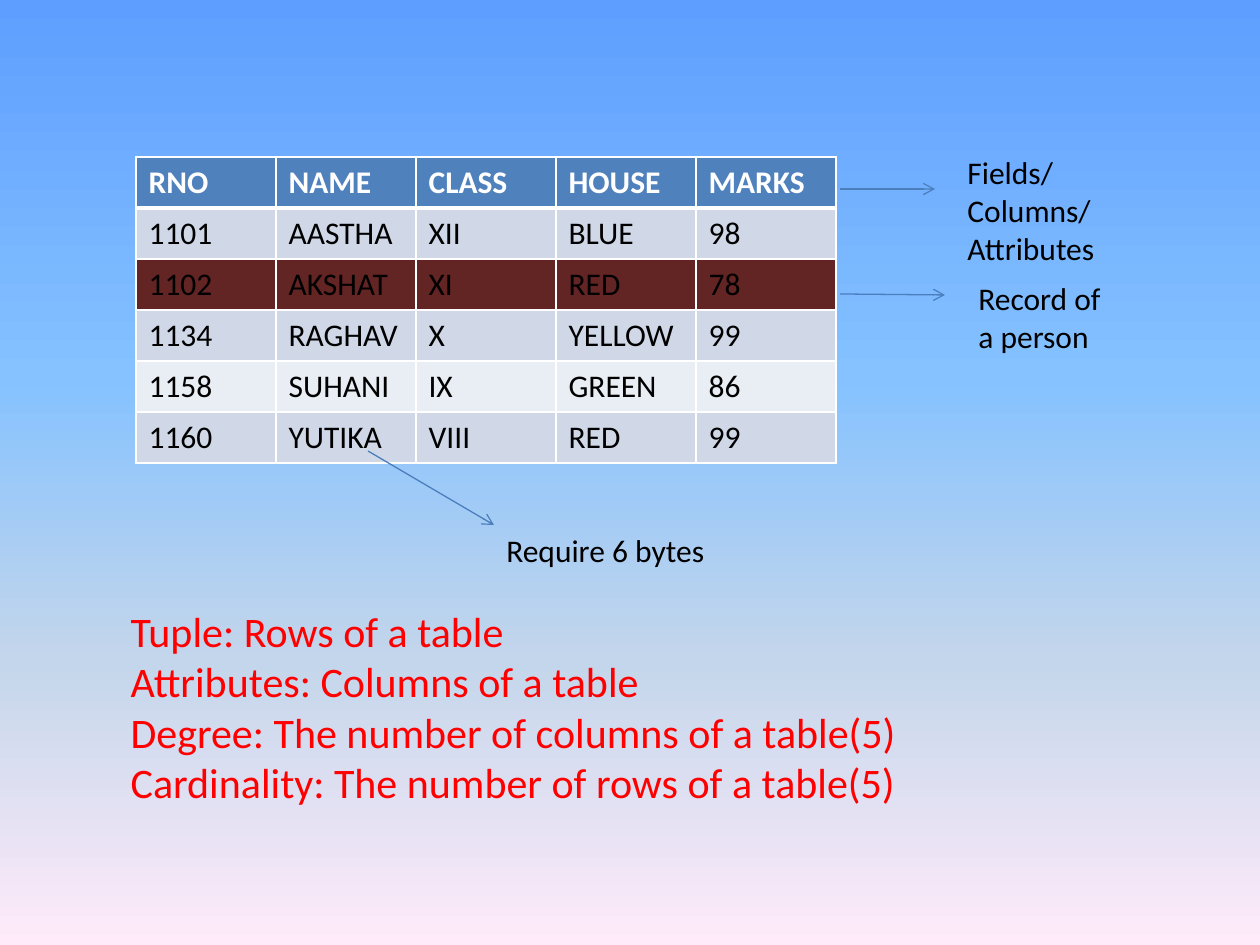
from typing import NamedTuple

from lxml import etree
from pptx import Presentation
from pptx import util as u
from pptx.dml.color import RGBColor
from pptx.enum import shapes, text
from pptx.oxml.ns import qn

PX = u.Inches(1) / 126
FONT = "Calibri"
COLORS = {
    "header": "4F81BD",
    "band": "D0D8E8",
    "plain": "E9EDF4",
    "record": "632523",
    "white": "FFFFFF",
    "black": "000000",
    "definition": "FF0000",
    "arrow": "4B7EBC",
}
BACKGROUND_STOPS = [(0, "5E9EFF"), (40, "85C2FF"), (70, "C4D6EB"), (100, "FFEBFA")]


class Box(NamedTuple):
    left: int
    top: int
    width: int
    height: int


class Row(NamedTuple):
    fill: str
    values: tuple[str, ...]


class Callout(NamedTuple):
    label: str
    box: Box
    start: tuple[int, int]
    end: tuple[int, int]


TABLE_BOX = Box(136, 157, 700, 306)
ROWS = [
    Row("header", ("RNO", "NAME", "CLASS", "HOUSE", "MARKS")),
    Row("band", ("1101", "AASTHA", "XII", "BLUE", "98")),
    Row("record", ("1102", "AKSHAT", "XI", "RED", "78")),
    Row("band", ("1134", "RAGHAV", "X", "YELLOW", "99")),
    Row("plain", ("1158", "SUHANI", "IX", "GREEN", "86")),
    Row("band", ("1160", "YUTIKA", "VIII", "RED", "99")),
]
CALLOUTS = [
    Callout("Require 6 bytes", Box(494, 525, 252, 50), (368, 451), (494, 525)),
    Callout("Record of a person", Box(966, 273, 168, 89), (840, 294), (945, 295)),
    Callout("Fields/Columns/Attributes", Box(955, 147, 231, 89), (840, 189), (935, 189)),
]
DEFINITIONS_BOX = Box(118, 599, 1061, 217)
DEFINITIONS = [
    "Tuple: Rows of a table",
    "Attributes: Columns of a table",
    "Degree: The number of columns of a table(5)",
    "Cardinality: The number of rows of a table(5)",
]


def px(length: float) -> u.Emu:
    return u.Emu(round(length * PX))


def rgb(name: str) -> RGBColor:
    return RGBColor.from_string(COLORS[name])


def write(paragraph, content: str, *, size: int = 18, color: str = "black", bold: bool = False) -> None:
    run = paragraph.add_run()
    run.text = content
    run.font.name = FONT
    run.font.size = u.Pt(size)
    run.font.bold = bold
    run.font.color.rgb = rgb(color)


def paint_background(slide) -> None:
    fill = slide.background.fill
    fill.gradient()
    fill.gradient_angle = 270
    stops = slide.element.find(".//" + qn("a:gsLst"))
    stops.clear()
    for position, color in BACKGROUND_STOPS:
        stop = etree.SubElement(stops, qn("a:gs"), pos=str(position * 1000))
        etree.SubElement(stop, qn("a:srgbClr"), val=color)


def add_borders(cell, **widths: int) -> None:
    """Give the cell white borders; widths in points, keyed by side."""
    properties = cell._tc.get_or_add_tcPr()
    for side, width in widths.items():
        line = etree.SubElement(properties, qn(f"a:ln{side}"), w=str(u.Pt(width)))
        fill = etree.SubElement(line, qn("a:solidFill"))
        etree.SubElement(fill, qn("a:srgbClr"), val=COLORS["white"])


def add_marks_table(slide) -> None:
    columns = len(ROWS[0].values)
    table = slide.shapes.add_table(len(ROWS), columns, *map(px, TABLE_BOX)).table
    for column in table.columns:
        column.width = px(TABLE_BOX.width / columns)
    for index, row in enumerate(ROWS):
        table.rows[index].height = px(TABLE_BOX.height / len(ROWS))
        is_header = index == 0
        for cell, value in zip(table.rows[index].cells, row.values):
            add_borders(cell, L=1, R=1, T=3 if index == 1 else 1, B=3 if is_header else 1)
            cell.fill.solid()
            cell.fill.fore_color.rgb = rgb(row.fill)
            write(cell.text_frame.paragraphs[0], value,
                  color="white" if is_header else "black", bold=is_header)


def add_callout(slide, callout: Callout) -> None:
    arrow = slide.shapes.add_connector(
        shapes.MSO_CONNECTOR.STRAIGHT, *map(px, callout.start + callout.end))
    arrow.line.color.rgb = rgb("arrow")
    arrow.line.width = u.Pt(0.75)
    etree.SubElement(arrow.line._get_or_add_ln(), qn("a:tailEnd"), type="arrow")
    etree.SubElement(arrow._element.spPr, qn("a:effectLst"))

    frame = slide.shapes.add_textbox(*map(px, callout.box)).text_frame
    frame.word_wrap = True
    frame.auto_size = text.MSO_AUTO_SIZE.SHAPE_TO_FIT_TEXT
    write(frame.paragraphs[0], callout.label)


def fill_definitions(body) -> None:
    body.left, body.top, body.width, body.height = map(px, DEFINITIONS_BOX)
    frame = body.text_frame
    frame.word_wrap = True
    frame.auto_size = text.MSO_AUTO_SIZE.SHAPE_TO_FIT_TEXT
    for index, definition in enumerate(DEFINITIONS):
        paragraph = frame.add_paragraph() if index else frame.paragraphs[0]
        paragraph.space_before = u.Pt(0)
        properties = paragraph._p.get_or_add_pPr()
        properties.set("marL", "0")
        properties.set("indent", "0")
        etree.SubElement(properties, qn("a:buNone"))
        write(paragraph, definition, size=24, color="definition")


def main() -> None:
    presentation = Presentation()
    presentation.slide_width = u.Inches(10)
    presentation.slide_height = u.Inches(7.5)
    slide = presentation.slides.add_slide(presentation.slide_layouts[1])
    title = slide.shapes.title.element
    title.getparent().remove(title)

    paint_background(slide)
    add_marks_table(slide)
    for callout in CALLOUTS:
        add_callout(slide, callout)
    fill_definitions(slide.placeholders[1])
    presentation.save("out.pptx")


if __name__ == "__main__":
    main()
